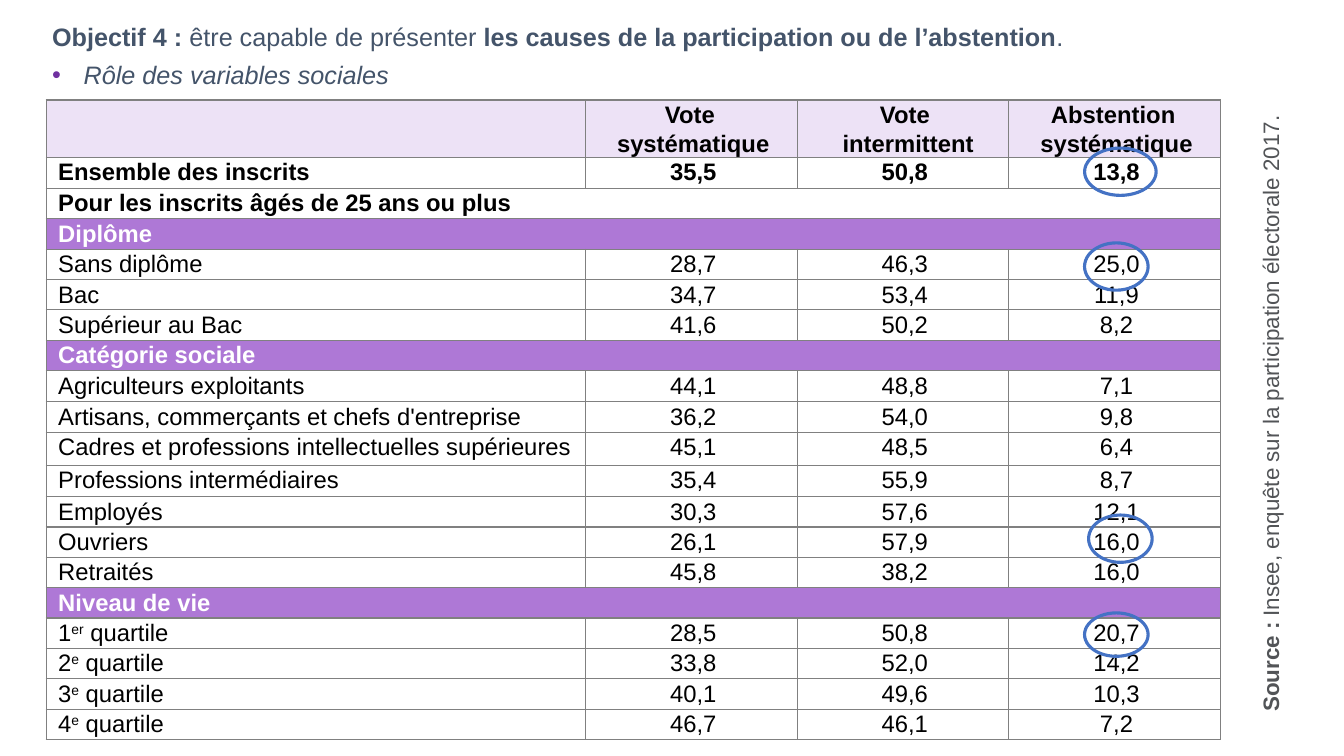
from lxml.etree import SubElement
from pptx import Presentation
from pptx.dml.color import RGBColor
from pptx.enum.shapes import MSO_SHAPE as Shape
from pptx.enum.text import MSO_AUTO_SIZE as AutoSize, PP_ALIGN as Align
from pptx.oxml.ns import qn
from pptx.util import Pt

COLORS = {
    "title": "44546A", "bullet": "7030A0", "source": "525457", "ring": "4472C4",
    "head": "EDE2F6", "section": "AE78D6", "grid": "808080",
    "black": "000000", "white": "FFFFFF",
}
HEAD = [["Vote ", "systématique"], ["Vote", " intermittent"], ["Abstention ", "systématique"]]
TOTAL = "Ensemble des inscrits"
SECTIONS = ["Diplôme", "Catégorie sociale", "Niveau de vie"]
ROWS = [
    (TOTAL, "35,5", "50,8", "13,8"),
    ("Pour les inscrits âgés de 25 ans ou plus",),
    (SECTIONS[0],),
    ("Sans diplôme", "28,7", "46,3", "25,0"),
    ("Bac", "34,7", "53,4", "11,9"),
    ("Supérieur au Bac", "41,6", "50,2", "8,2"),
    (SECTIONS[1],),
    ("Agriculteurs exploitants", "44,1", "48,8", "7,1"),
    ("Artisans, commerçants et chefs d'entreprise", "36,2", "54,0", "9,8"),
    ("Cadres et professions intellectuelles supérieures", "45,1", "48,5", "6,4"),
    ("Professions intermédiaires", "35,4", "55,9", "8,7"),
    ("Employés", "30,3", "57,6", "12,1"),
    ("Ouvriers", "26,1", "57,9", "16,0"),
    ("Retraités", "45,8", "38,2", "16,0"),
    (SECTIONS[2],),
    ("1^er^ quartile", "28,5", "50,8", "20,7"),
    ("2^e^ quartile", "33,8", "52,0", "14,2"),
    ("3^e^ quartile", "40,1", "49,6", "10,3"),
    ("4^e^ quartile", "46,7", "46,1", "7,2"),
]
COL_WIDTHS = [385.2, 151.2, 151.2, 151.2]
ROW_HEIGHT = 21.7
SPECIAL_HEIGHTS = {0: 34, 1: 22.3, 8: 22.3, 10: 23.8, 11: 22.3}
RINGS = [(774.7, 105.8, 51.1, 33.8), (774.7, 173.5, 45.4, 33.8),
         (777.6, 367.9, 45.4, 33.8), (774.7, 437.8, 45.4, 31)]


def rgb(name):
    return RGBColor.from_string(COLORS[name])


class Deck:
    def __init__(self, slide, font="Arial"):
        self.s = slide
        self.font = font

    def run(self, p, text, size, color, bold=False, italic=False):
        r = p.add_run()
        r.text = text
        f = r.font
        f.name, f.size, f.bold, f.italic = self.font, Pt(size), bold, italic
        f.color.rgb = rgb(color)
        return r

    def textbox(self, x, y, w, h, rotation=0):
        sp = self.s.shapes.add_textbox(Pt(x), Pt(y), Pt(w), Pt(h))
        sp.rotation = rotation
        tf = sp.text_frame
        tf.word_wrap = True
        tf.auto_size = AutoSize.SHAPE_TO_FIT_TEXT
        return tf

    def bullet(self, p, indent, color):
        pPr = p._p.get_or_add_pPr()
        pPr.set("marL", str(Pt(indent)))
        pPr.set("indent", str(-Pt(indent)))
        clr = SubElement(pPr, qn("a:buClr"))
        SubElement(clr, qn("a:srgbClr"), val=COLORS[color])
        SubElement(pPr, qn("a:buFont"), typeface=self.font)
        SubElement(pPr, qn("a:buChar"), char="•")

    def ring(self, x, y, w, h):
        sp = self.s.shapes.add_shape(Shape.OVAL, Pt(x), Pt(y), Pt(w), Pt(h))
        sp.shadow.inherit = False
        sp.fill.background()
        sp.line.color.rgb = rgb("ring")
        sp.line.width = Pt(2.25)

    def table(self, x, y, widths, heights):
        table = self.s.shapes.add_table(
            len(heights), len(widths), Pt(x), Pt(y),
            Pt(sum(widths)), Pt(sum(heights))).table
        table.first_row = table.horz_banding = False
        for col, width in zip(table.columns, widths):
            col.width = Pt(width)
        for row, height in zip(table.rows, heights):
            row.height = Pt(height)
        return table

    def style_cell(self, cell, fill=None):
        """Set margins, grid lines and fill."""
        cell.margin_left, cell.margin_right = Pt(8.6), Pt(5.8)
        cell.margin_top = cell.margin_bottom = 0
        tcPr = cell._tc.get_or_add_tcPr()
        for side in ("lnL", "lnR", "lnT", "lnB"):
            ln = SubElement(tcPr, qn(f"a:{side}"), w=str(Pt(1)))
            solid = SubElement(ln, qn("a:solidFill"))
            SubElement(solid, qn("a:srgbClr"), val=COLORS["grid"])
        if fill:
            cell.fill.solid()
            cell.fill.fore_color.rgb = rgb(fill)
        else:
            cell.fill.background()

    def cell_text(self, cell, lines, color="black", bold=False, align=Align.LEFT):
        """Write one paragraph per line; text between carets is superscript."""
        tf = cell.text_frame
        for i, line in enumerate(lines):
            p = tf.add_paragraph() if i else tf.paragraphs[0]
            p.alignment = align
            p.line_spacing = 1.07
            for j, part in enumerate(line.split("^")):
                r = self.run(p, part, 17, color, bold)
                if j % 2:
                    r._r.get_or_add_rPr().set("baseline", "30000")


def add_turnout_table(deck):
    heights = [SPECIAL_HEIGHTS.get(i, ROW_HEIGHT) for i in range(len(ROWS) + 1)]
    table = deck.table(33, 71.5, COL_WIDTHS, heights)
    last = len(COL_WIDTHS) - 1
    for c in range(last + 1):
        deck.style_cell(table.cell(0, c), "head")
        if c:
            deck.cell_text(table.cell(0, c), HEAD[c - 1], bold=True, align=Align.CENTER)
    for i, row in enumerate(ROWS, 1):
        section = row[0] in SECTIONS
        spanning = len(row) == 1
        for c in range(last + 1):
            deck.style_cell(table.cell(i, c), "section" if section else None)
        if spanning:
            table.cell(i, 0).merge(table.cell(i, last))
        for c, text in enumerate(row):
            deck.cell_text(table.cell(i, c), [text],
                           color="white" if section else "black",
                           bold=spanning or row[0] == TOTAL,
                           align=Align.CENTER if c else Align.LEFT)


def main():
    prs = Presentation()
    prs.slide_width, prs.slide_height = Pt(960), Pt(540)
    deck = Deck(prs.slides.add_slide(prs.slide_layouts[6]))

    add_turnout_table(deck)

    tf = deck.textbox(30.2, 11.5, 919.4, 56.9)
    p = tf.paragraphs[0]
    p.space_before = Pt(6)
    for text, bold in [("Objectif 4 : ", True), ("être capable de présenter ", False),
                       ("les causes de la participation ou de l’abstention", True),
                       (".", False)]:
        deck.run(p, text, 18, "title", bold)
    p = tf.add_paragraph()
    p.space_before = Pt(6)
    deck.bullet(p, 22.5, "bullet")
    deck.run(p, "Rôle des variables sociales", 18, "title", italic=True)

    p = deck.textbox(667.4, 262.1, 480.2, 26.6, rotation=270).paragraphs[0]
    p.alignment = Align.JUSTIFY
    p.space_before = Pt(12)
    deck.run(p, "Source : ", 16, "source", bold=True)
    deck.run(p, "Insee, enquête sur la participation électorale 2017.", 16, "source")

    for box in RINGS:
        deck.ring(*box)

    prs.save("out.pptx")


if __name__ == "__main__":
    main()
